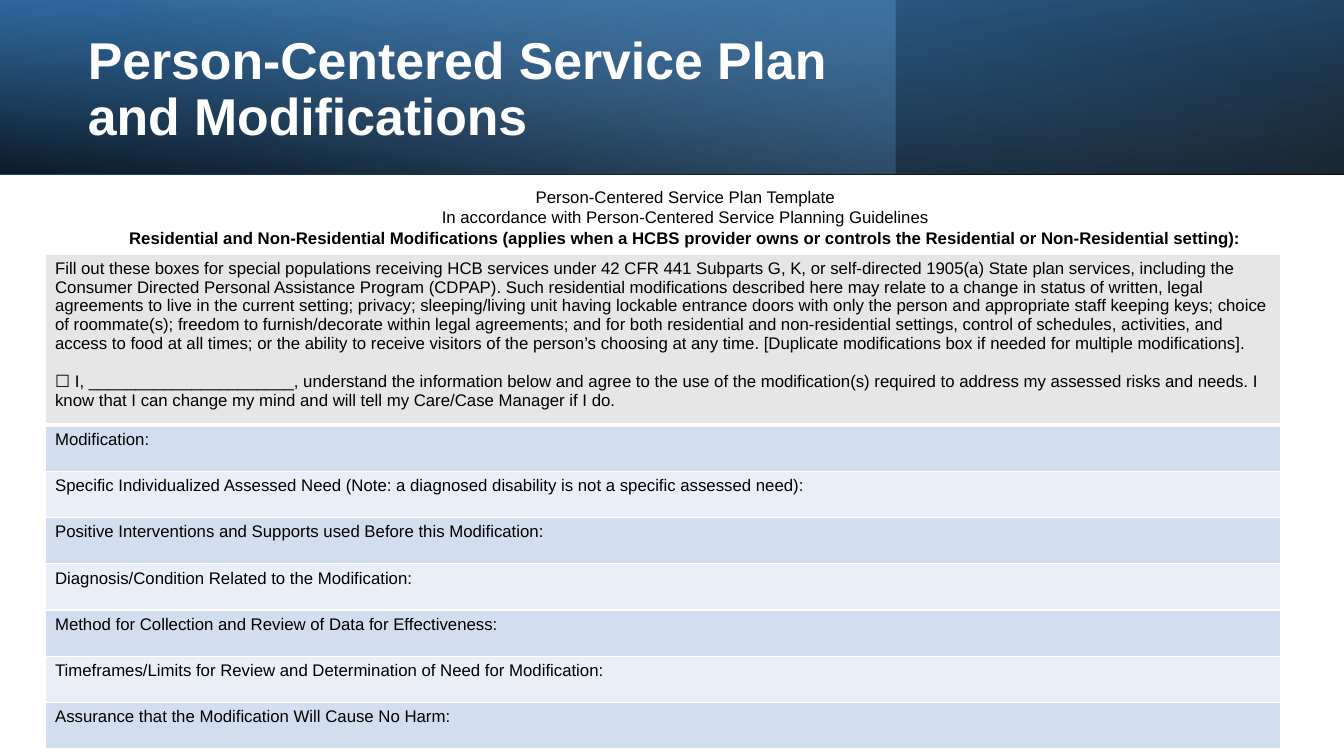
from dataclasses import dataclass

from lxml import etree
from pptx import Presentation
from pptx import util as u
from pptx.dml.color import RGBColor
from pptx.enum import shapes, text
from pptx.oxml.ns import qn

SCALE = 12192000 / 1344
HUES = {
    "black": "000000",
    "white": "FFFFFF",
    "navy": "2E75B6",
    "blue": "5B9BD5",
    "sky": "9DC3E6",
    "grey": "E7E6E6",
    "band": "D2DEEF",
    "pale": "EAEFF7",
}
BODY = {"name": "Arial", "size": u.Pt(12), "bold": False}
STRONG = {**BODY, "bold": True}
HEAD = {"name": "Arial", "size": u.Pt(37), "bold": True}
FRAME = {"word_wrap": True, "auto_size": text.MSO_AUTO_SIZE.NONE}
EDGES = {"L": 1, "R": 1, "T": 1, "B": 3}


@dataclass(frozen=True)
class Stop:
    place: int
    hue: str
    alpha: int


@dataclass(frozen=True)
class Layer:
    width: int
    angle: int
    stops: tuple[Stop, Stop]
    flip: bool = False
    turn: int = 0


@dataclass(frozen=True)
class Line:
    words: str
    style: dict


LAYERS = (
    Layer(1344, 100, (Stop(0, "black", 96), Stop(100, "navy", 100)), True, 180),
    Layer(896, 140, (Stop(0, "blue", 41), Stop(74, "sky", 0))),
    Layer(1344, 260, (Stop(0, "black", 63), Stop(78, "blue", 15)), True),
)
TITLE = (Line("Person-Centered Service Plan and Modifications", HEAD),)
INTRO = (
    Line("Person-Centered Service Plan Template", BODY),
    Line("In accordance with Person-Centered Service Planning Guidelines", BODY),
    Line(
        "Residential and Non-Residential Modifications (applies when a HCBS "
        "provider owns or controls the Residential or Non-Residential setting):",
        STRONG,
    ),
)
SCOPE = (
    "Fill out these boxes for special populations receiving HCB services under "
    "42 CFR 441 Subparts G, K, or self-directed 1905(a) State plan services, "
    "including the Consumer Directed Personal Assistance Program (CDPAP).",
    "Such residential modifications described here may relate to a change in status "
    "of written, legal agreements to live in the current setting; privacy; "
    "sleeping/living unit having lockable entrance doors with only the person "
    "and appropriate staff keeping keys; choice of roommate(s); freedom to "
    "furnish/decorate within legal agreements; and for both residential and "
    "non-residential settings, control of schedules, activities, and access to "
    "food at all times; or the ability to receive visitors of the person’s "
    "choosing at any time.",
    "[Duplicate modifications box if needed for multiple modifications].",
)
NOTE = (
    Line(" ".join(SCOPE), BODY),
    Line(
        "☐ I, ______________________, understand the information below and agree to "
        "the use of the modification(s) required to address my assessed risks and "
        "needs. I know that I can change my mind and will tell my Care/Case Manager "
        "if I do.",
        BODY,
    ),
)
FIELDS = (
    "Modification:",
    "Specific Individualized Assessed Need (Note: a diagnosed disability is not a "
    "specific assessed need):",
    "Positive Interventions and Supports used Before this Modification:",
    "Diagnosis/Condition Related to the Modification:",
    "Method for Collection and Review of Data for Effectiveness:",
    "Timeframes/Limits for Review and Determination of Need for Modification:",
    "Assurance that the Modification Will Cause No Harm:",
)


def px(size: int) -> int:
    return round(size * SCALE)


def tint(hue: str) -> RGBColor:
    return RGBColor.from_string(HUES[hue])


def apply(target, style: dict) -> None:
    for key, value in style.items():
        setattr(target, key, value)


def write(frame, lines: tuple[Line, ...], hue: str, form: dict) -> None:
    for i, line in enumerate(lines):
        para = frame.add_paragraph() if i else frame.paragraphs[0]
        apply(para, form)
        run = para.add_run()
        run.text = line.words
        apply(run.font, line.style)
        run.font.color.rgb = tint(hue)


def add_layer(slide, layer: Layer) -> None:
    shape = slide.shapes.add_shape(
        shapes.MSO_SHAPE.RECTANGLE, 0, 0, px(layer.width), px(174)
    )
    shape.shadow.inherit = False
    shape.line.fill.background()
    shape.rotation = layer.turn
    if layer.flip:
        shape._element.spPr.find(qn("a:xfrm")).set("flipH", "1")
    shape.fill.gradient()
    shape.fill.gradient_angle = 360 - layer.angle
    for stop, data in zip(shape.fill.gradient_stops, layer.stops):
        stop.position = data.place / 100
        stop.color.rgb = tint(data.hue)
    marks = shape._element.spPr.iter(qn("a:srgbClr"))
    for mark, data in zip(list(marks), layer.stops):
        etree.SubElement(mark, qn("a:alpha"), val=str(data.alpha * 1000))


def add_text(slide, box: tuple[int, int, int, int], lines: tuple[Line, ...],
             hue: str, form: dict, anchor: text.MSO_ANCHOR) -> None:
    frame = slide.shapes.add_textbox(*map(px, box)).text_frame
    apply(frame, {**FRAME, "vertical_anchor": anchor})
    write(frame, lines, hue, form)


def add_edges(cell) -> None:
    props = cell._tc.get_or_add_tcPr()
    for side, width in EDGES.items():
        edge = etree.SubElement(props, qn(f"a:ln{side}"), w=str(u.Pt(width)))
        fill = etree.SubElement(edge, qn("a:solidFill"))
        etree.SubElement(fill, qn("a:srgbClr"), val=HUES["white"])


def add_form(slide) -> None:
    rows = (NOTE, *((Line(field, BODY),) for field in FIELDS))
    table = slide.shapes.add_table(
        len(rows), 1, px(45), px(254), px(1236), px(495)
    ).table
    apply(table, {"first_row": True, "horz_banding": False})
    for i, lines in enumerate(rows):
        table.rows[i].height = px(324) // len(FIELDS) if i else px(171)
        cell = table.cell(i, 0)
        if not i:
            add_edges(cell)
        cell.fill.solid()
        hue = ("pale", "band")[i % 2] if i else "grey"
        cell.fill.fore_color.rgb = tint(hue)
        write(cell.text_frame, lines, "black", {})
    table.cell(0, 0).text_frame.paragraphs[1].space_before = u.Pt(14)


def main() -> None:
    deck = Presentation()
    apply(deck, {"slide_width": px(1344), "slide_height": px(756)})
    slide = deck.slides.add_slide(deck.slide_layouts[6])
    for layer in LAYERS:
        add_layer(slide, layer)
    add_text(slide, (78, 27, 778, 128), TITLE, "white",
             {"line_spacing": 0.9}, text.MSO_ANCHOR.MIDDLE)
    add_text(slide, (44, 182, 1283, 72), INTRO, "black",
             {"alignment": text.PP_ALIGN.CENTER}, text.MSO_ANCHOR.TOP)
    add_form(slide)
    deck.save("out.pptx")


if __name__ == "__main__":
    main()
